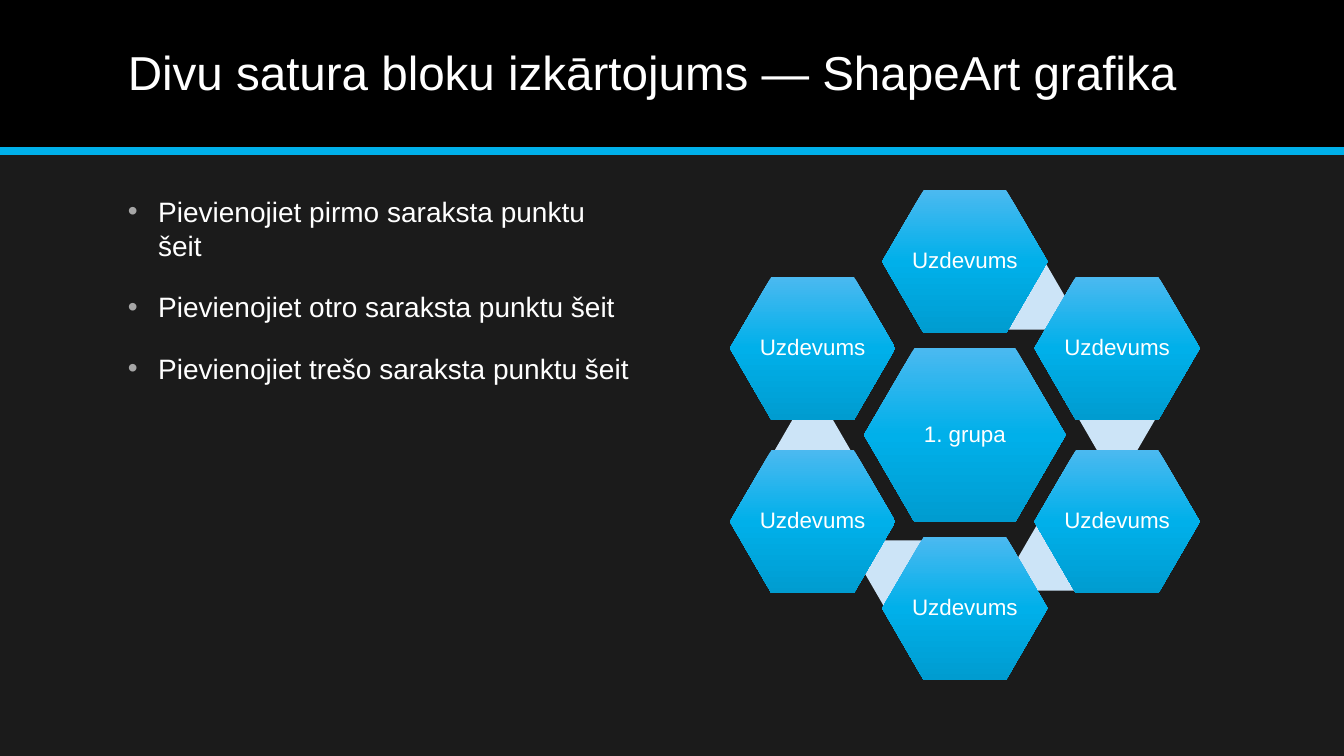
from copy import deepcopy

from lxml.etree import SubElement
from pptx import Presentation
from pptx.dml.color import RGBColor
from pptx.enum.shapes import MSO_CONNECTOR, MSO_SHAPE
from pptx.enum.text import MSO_ANCHOR, PP_ALIGN
from pptx.oxml.ns import qn
from pptx.util import Inches, Pt

COLORS = {
    "background": "1B1B1B",
    "band": "000000",
    "accent": "00B0EA",
    "accent_light": "4BB9F0",
    "accent_dark": "009CD0",
    "link": "CCE4F7",
    "text": "FFFFFF",
    "bullet": "A6A6A6",
}
FONT = "Arial"
SLIDE_W, SLIDE_H = 13.33, 7.5
BAND_H = 1.5

TITLE = "Divu satura bloku izkārtojums — ShapeArt grafika"
POINTS = [
    "Pievienojiet pirmo saraksta punktu šeit",
    "Pievienojiet otro saraksta punktu šeit",
    "Pievienojiet trešo saraksta punktu šeit",
]
CENTER_LABEL = "1. grupa"
TASK_LABEL = "Uzdevums"

# Cluster layout: offsets from the centre of the cluster
CENTER_SIZE = (2, 1.73)
TASK_SIZE = (1.64, 1.42)
LINK_SIZE = (0.75, 0.65)
COLUMN, ROW = 1.51, 0.86
TASK_OFFSETS = [(0, -2 * ROW), (COLUMN, -ROW), (COLUMN, ROW),
                (0, 2 * ROW), (-COLUMN, ROW), (-COLUMN, -ROW)]
LINK_OFFSETS = [(0.62, -1.37), (1.51, -0.15), (0.9, 1.22),
                (-0.62, 1.37), (-1.51, 0.15)]


def color(name):
    return RGBColor.from_string(COLORS[name])


def style_text(paragraph, size):
    for run in paragraph.runs:
        run.font.name = FONT
        run.font.size = Pt(size)
        run.font.color.rgb = color("text")


def add_header(slide, left, top, width, height):
    # Black band
    band = slide.shapes.add_shape(MSO_SHAPE.RECTANGLE, Inches(left), Inches(top),
                                  Inches(width), Inches(height))
    band.shadow.inherit = False
    band.fill.solid()
    band.fill.fore_color.rgb = color("band")
    band.line.fill.background()

    # Accent rule along the lower edge
    bottom = Inches(top + height)
    rule = slide.shapes.add_connector(MSO_CONNECTOR.STRAIGHT, Inches(left), bottom,
                                      Inches(left + width), bottom)
    rule.line.color.rgb = color("accent")
    rule.line.width = Pt(6)
    SubElement(rule._element.spPr, qn("a:effectLst"))

    # Title
    title = slide.shapes.add_textbox(Inches(left + 1.17), Inches(top + 0.14),
                                     Inches(11), Inches(1.2)).text_frame
    title.word_wrap = True
    title.vertical_anchor = MSO_ANCHOR.MIDDLE
    title.text = TITLE
    title.paragraphs[0].line_spacing = 0.9
    style_text(title.paragraphs[0], 34)


def add_bullet(paragraph):
    properties = paragraph._p.get_or_add_pPr()
    properties.set("marL", str(Inches(0.3)))
    properties.set("indent", str(-Inches(0.3)))
    bullet_color = SubElement(properties, qn("a:buClr"))
    SubElement(bullet_color, qn("a:srgbClr"), val=COLORS["bullet"])
    SubElement(properties, qn("a:buFont"), typeface=FONT)
    SubElement(properties, qn("a:buChar"), char="•")


def add_points(slide, left, top, width, height):
    body = slide.shapes.add_textbox(Inches(left), Inches(top),
                                    Inches(width), Inches(height)).text_frame
    body.word_wrap = True
    body.text = "\n".join(POINTS)
    for point in body.paragraphs:
        point.space_before = Pt(20)
        add_bullet(point)
        style_text(point, 20)


def add_hexagon(slide, center_x, center_y, size):
    width, height = size
    hexagon = slide.shapes.add_shape(
        MSO_SHAPE.HEXAGON, Inches(center_x - width / 2), Inches(center_y - height / 2),
        Inches(width), Inches(height))
    hexagon.adjustments[0] = 0.29
    hexagon.shadow.inherit = False
    hexagon.line.fill.background()
    return hexagon


def add_link(slide, center_x, center_y):
    link = add_hexagon(slide, center_x, center_y, LINK_SIZE)
    link.fill.solid()
    link.fill.fore_color.rgb = color("link")


def add_labelled_hexagon(slide, center_x, center_y, size, label):
    hexagon = add_hexagon(slide, center_x, center_y, size)

    # Three-stop gradient from top to bottom
    hexagon.fill.gradient()
    hexagon.fill.gradient_angle = 270
    stop_list = hexagon._element.spPr.find(".//" + qn("a:gsLst"))
    stop_list.append(deepcopy(stop_list[0]))
    for stop, position, name in zip(hexagon.fill.gradient_stops, (0, 0.5, 1),
                                    ("accent_light", "accent", "accent_dark")):
        stop.position = position
        stop.color.rgb = color(name)

    # Label
    frame = hexagon.text_frame
    frame.margin_left = frame.margin_right = Inches(0.02)
    frame.margin_top = frame.margin_bottom = Inches(0.02)
    frame.word_wrap = False
    frame.vertical_anchor = MSO_ANCHOR.MIDDLE
    frame.text = label
    frame.paragraphs[0].alignment = PP_ALIGN.CENTER
    frame.paragraphs[0].line_spacing = 0.9
    style_text(frame.paragraphs[0], 16)


def add_cluster(slide, left, top, width, height):
    center_x, center_y = left + width / 2, top + height / 2
    add_labelled_hexagon(slide, center_x, center_y, CENTER_SIZE, CENTER_LABEL)
    for dx, dy in LINK_OFFSETS:
        add_link(slide, center_x + dx, center_y + dy)
    for dx, dy in TASK_OFFSETS:
        add_labelled_hexagon(slide, center_x + dx, center_y + dy, TASK_SIZE, TASK_LABEL)


def main():
    presentation = Presentation()
    presentation.slide_width = Inches(SLIDE_W)
    presentation.slide_height = Inches(SLIDE_H)
    slide = presentation.slides.add_slide(presentation.slide_layouts[6])
    slide.background.fill.solid()
    slide.background.fill.fore_color.rgb = color("background")

    add_header(slide, 0, 0, SLIDE_W, BAND_H)
    add_points(slide, 1.17, 1.88, 5.2, 4.88)
    add_cluster(slide, 7.24, 1.88, 4.66, 4.87)
    presentation.save("out.pptx")


if __name__ == "__main__":
    main()
